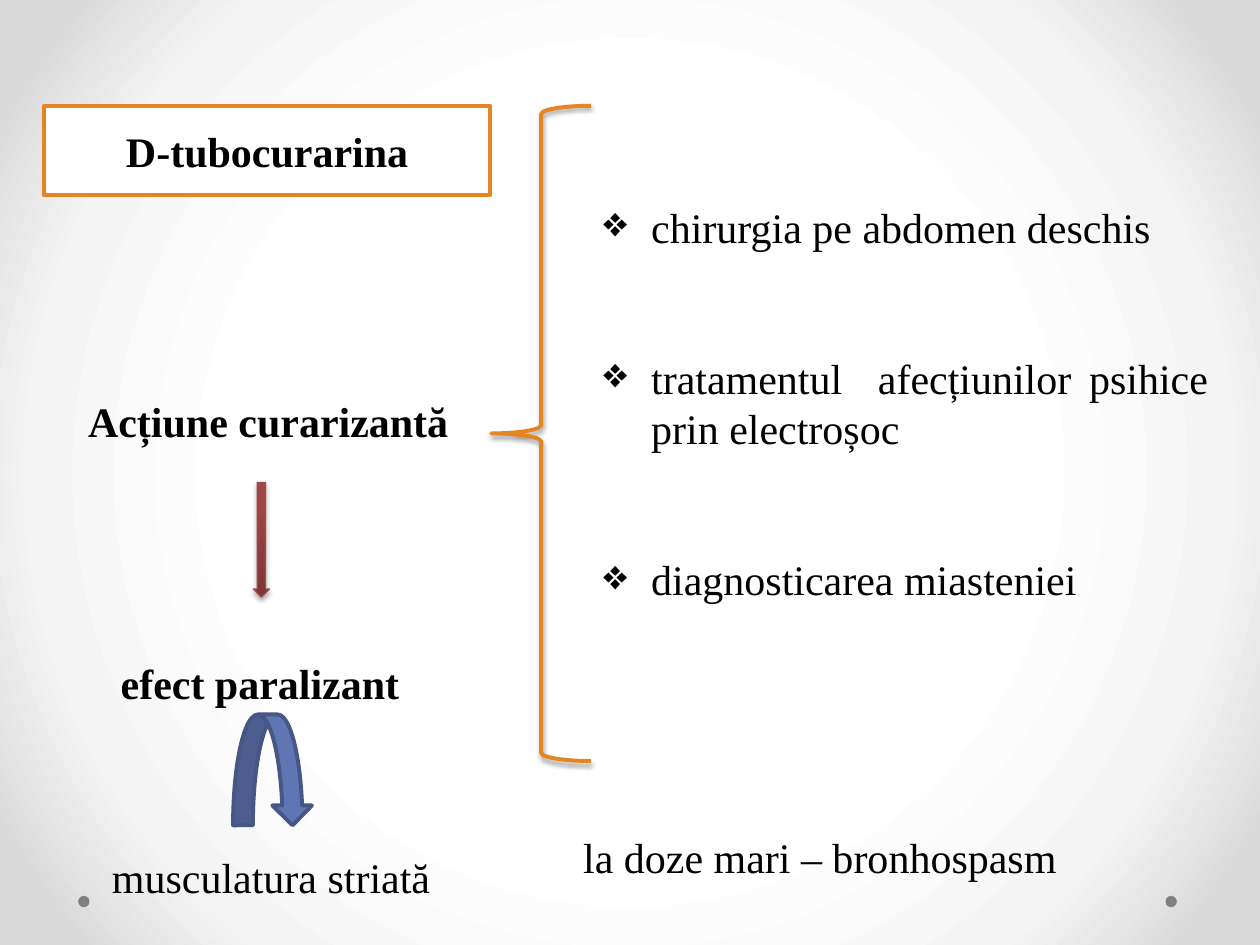
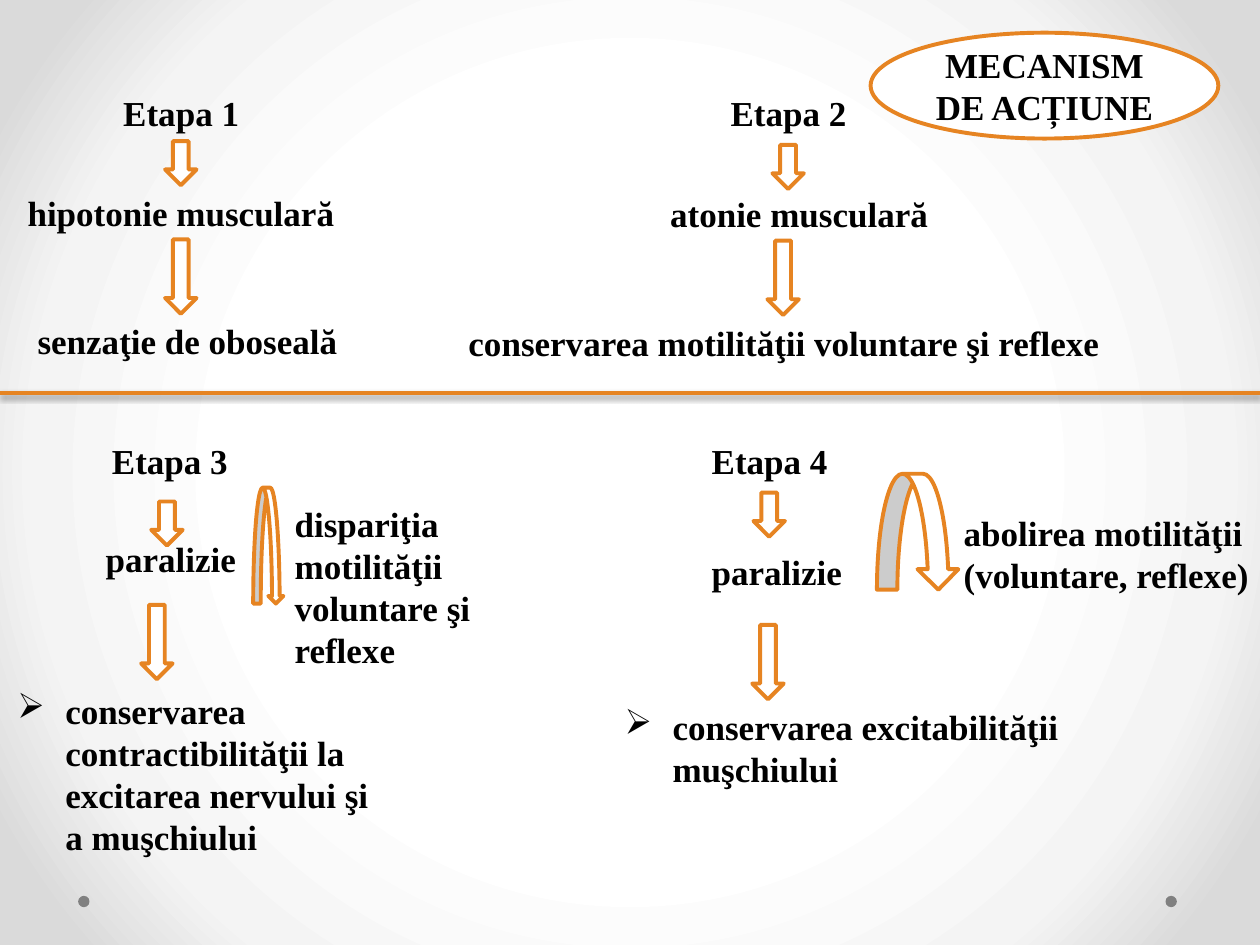
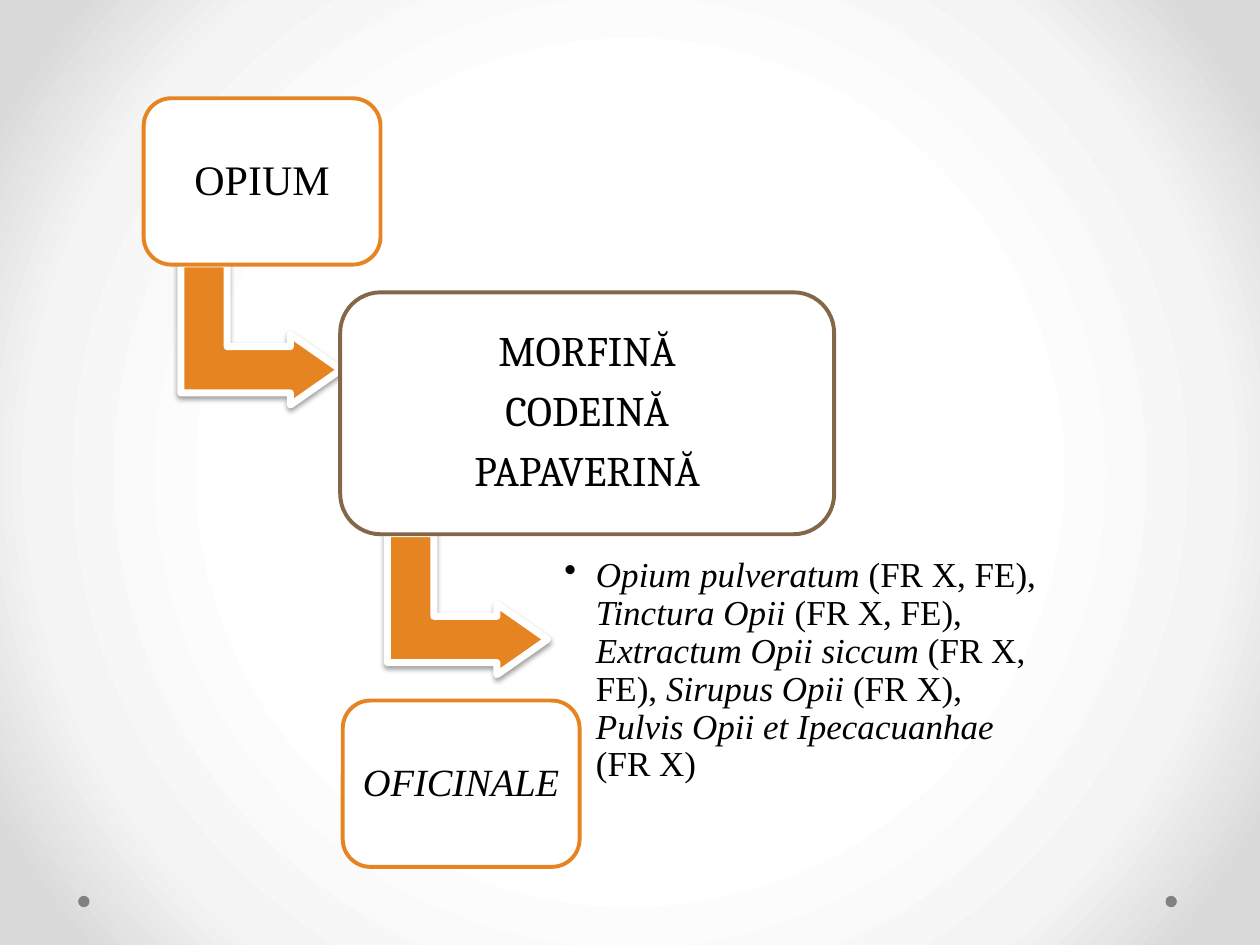
from pptx import Presentation
from pptx import util as u
from pptx.dml.color import RGBColor
from pptx.enum import shapes, text
from pptx.oxml import parse_xml
from pptx.oxml.ns import nsdecls, qn

BLACK, WHITE, GREY = "000000", "FFFFFF", "808080"
ORANGE, BROWN = "E68422", "846648"
BLUE, DARK_BLUE, RED = "6076B4", "475785", "9A4E4E"
SERIF = "Times New Roman"
KIND = shapes.MSO_SHAPE
ALIGN = text.PP_ALIGN
CENTER, JUSTIFY = ALIGN.CENTER, ALIGN.JUSTIFY
MIDDLE = text.MSO_ANCHOR.MIDDLE


def rgb(hex_value):
    return RGBColor.from_string(hex_value)


def inches(box):
    return [u.Inches(v) for v in box]


def gradient(stops, direction):
    marks = "".join(f'<a:gs pos="{pos * 1000}"><a:srgbClr val="{color}"/></a:gs>'
                    for pos, color in stops)
    return parse_xml(f'<a:gradFill {nsdecls("a")} rotWithShape="1">'
                     f'<a:gsLst>{marks}</a:gsLst>{direction}</a:gradFill>')


def set_background(master):
    master.background.fill.solid()
    bg = master.element.find(".//" + qn("p:bgPr"))
    circle = ('<a:path path="circle"><a:fillToRect l="50000" t="50000" '
              'r="50000" b="50000"/></a:path>')
    stops = [(50, WHITE), (76, "F4F4F4"), (92, "DADADA")]
    bg.replace(bg[0], gradient(stops, circle))


def set_effect(sp, alpha=0, dist=1.6):
    shadow = ""
    if alpha:
        shadow = (f'<a:outerShdw blurRad="{u.Pt(3.1)}" dist="{u.Pt(dist)}" dir="5400000" '
                  f'rotWithShape="0"><a:srgbClr val="{BLACK}">'
                  f'<a:alpha val="{alpha * 1000}"/></a:srgbClr></a:outerShdw>')
    sp.element.spPr.append(
        parse_xml(f'<a:effectLst {nsdecls("a")}>{shadow}</a:effectLst>'))


def add_bullet(p, char, indent):
    pPr = p._p.get_or_add_pPr()
    pPr.set("marL", str(u.Inches(indent)))
    pPr.set("indent", str(-u.Inches(indent)))
    pPr.append(parse_xml(f'<a:buChar {nsdecls("a")} char="{char}"/>'))


def write(tf, paras, size=20, bold=False, italic=False, font=SERIF, align=None,
          spacing=None, gap=0, bullet=None, indent=0.38, anchor=None, inset=None):
    if anchor is not None:
        tf.vertical_anchor = anchor
    if inset is not None:
        tf.margin_left = tf.margin_right = u.Inches(inset)
        tf.margin_top = tf.margin_bottom = u.Inches(inset)
    for i, para in enumerate([paras] if isinstance(paras, str) else paras):
        p = tf.add_paragraph() if i else tf.paragraphs[0]
        p.alignment = align
        if spacing:
            p.line_spacing = spacing
        if i and gap:
            p.space_before = u.Pt(gap)
        if bullet:
            add_bullet(p, bullet, indent)
        for words, slanted in [(para, italic)] if isinstance(para, str) else para:
            r = p.add_run()
            r.text = words
            r.font.name, r.font.size = font, u.Pt(size)
            r.font.bold, r.font.italic = bold, slanted
            r.font.color.rgb = rgb(BLACK)


def add_label(slide, words, *box, wrap=False, grow=True, **fmt):
    tf = slide.shapes.add_textbox(*inches(box)).text_frame
    tf.word_wrap = wrap
    if grow:
        tf.auto_size = text.MSO_AUTO_SIZE.SHAPE_TO_FIT_TEXT
    write(tf, words, **fmt)


def add_shape(slide, kind, *box, fill=WHITE, line=ORANGE, width=2.25,
              shadow=0, dist=1.6, adj=(), turn=0):
    sp = slide.shapes.add_shape(kind, *inches(box))
    for i, value in enumerate(adj):
        sp.adjustments[i] = value
    sp.rotation = turn
    if fill:
        sp.fill.solid()
        sp.fill.fore_color.rgb = rgb(fill)
    else:
        sp.fill.background()
    if line:
        sp.line.color.rgb = rgb(line)
        sp.line.width = u.Pt(width)
    else:
        sp.line.fill.background()
    set_effect(sp, shadow, dist)
    return sp


def add_down_arrow(slide, x, y, h):
    add_shape(slide, KIND.DOWN_ARROW, x, y, 0.25, h)


def add_divider(slide, y):
    line = slide.shapes.add_connector(shapes.MSO_CONNECTOR.STRAIGHT,
                                      *inches((0, y, 10, y)))
    line.line.color.rgb = rgb(ORANGE)
    line.line.width = u.Pt(2.25)
    set_effect(line, 38)


def add_node(slide, words, x, y, w, h, line=ORANGE, **fmt):
    add_shape(slide, KIND.ROUNDED_RECTANGLE, x, y, w, h, line=line, adj=[0.167])
    pad = 0.05 * h
    add_label(slide, words, x + pad, y + pad, w - 2 * pad, h - 2 * pad, wrap=True,
              grow=False, align=CENTER, anchor=MIDDLE, spacing=0.9, **fmt)


def add_bent_arrow(slide, x, y):
    add_shape(slide, KIND.BENT_UP_ARROW, x, y, 1.12, 1.27, fill=ORANGE, line=WHITE,
              width=4, shadow=38, adj=[0.328, 0.25, 0.358], turn=90)


def new_slide(prs):
    slide = prs.slides.add_slide(prs.slide_layouts[6])
    for x in (9.25, 0.62):
        add_shape(slide, KIND.OVAL, x, 7.11, 0.09, 0.09, fill=GREY, line=None)
    return slide


def build_action(prs):
    s = new_slide(prs)
    add_label(s, "Acțiune curarizantă", 0.6, 3.09, 3.09, 0.5, size=24, bold=True)
    add_label(s, "efect paralizant", 0.86, 5.17, 2.43, 0.5, size=24, bold=True)
    arrow = add_shape(s, KIND.DOWN_ARROW, 2.01, 3.83, 0.13, 0.91, line=RED,
                      width=0.75, shadow=35, dist=1.8)
    spPr = arrow.element.spPr
    stops = [(0, "7D3535"), (80, "A24545"), (100, "A44343")]
    spPr.replace(spPr.find(qn("a:solidFill")),
                 gradient(stops, '<a:lin ang="16200000" scaled="0"/>'))
    add_label(s, ["chirurgia pe abdomen deschis",
                  "tratamentul  afecțiunilor psihice prin electroșoc",
                  "diagnosticarea miasteniei"],
              4.69, 1.55, 5, 3.33, wrap=True, size=24, align=JUSTIFY,
              bullet="❖", gap=57.5)
    add_shape(s, KIND.LEFT_BRACE, 3.9, 0.84, 0.79, 5.2, fill=None, shadow=38)
    title = add_shape(s, KIND.RECTANGLE, 0.35, 0.84, 3.54, 0.71)
    write(title.text_frame, "D-tubocurarina", size=24, bold=True, align=CENTER,
          anchor=MIDDLE)
    add_label(s, "la doze mari – bronhospasm", 4.53, 6.55, 4.09, 0.5, wrap=True, size=24)
    add_shape(s, KIND.CURVED_DOWN_ARROW, 1.85, 5.67, 0.63, 0.88, fill=BLUE, line=DARK_BLUE)
    add_label(s, "musculatura striată", 0.79, 6.71, 2.75, 0.5, size=24, align=JUSTIFY)


def build_mechanism(prs):
    s = new_slide(prs)
    title = add_shape(s, KIND.OVAL, 6.91, 0.26, 2.76, 0.84)
    write(title.text_frame, "MECANISM DE ACȚIUNE", bold=True, align=CENTER, anchor=MIDDLE)
    add_divider(s, 3.12)
    steps = [
        ("Etapa 1", 0.88, 0.68, 1.13),
        ("hipotonie musculară", 0.12, 1.47, 2.72),
        ("senzaţie de oboseală", 0.2, 2.49, 2.6),
        ("Etapa 2", 5.7, 0.68, 1.13),
        ("atonie musculară", 5.22, 1.48, 2.26),
        ("conservarea motilităţii voluntare şi reflexe", 3.62, 2.5, 5.24),
        ("Etapa 3", 0.79, 3.44, 1.13),
        ("paralizie", 0.74, 4.22, 1.24),
        ("Etapa 4", 5.55, 3.44, 1.13),
        ("paralizie", 5.55, 4.32, 1.24),
    ]
    for words, x, y, w in steps:
        add_label(s, words, x, y, w, 0.44, bold=True)
    notes = [
        ("dispariţia motilităţii voluntare şi reflexe", 2.24, 3.94, 2.36, 1.45, None),
        ("abolirea motilităţii (voluntare, reflexe)", 7.55, 4.01, 2.61, 0.77, None),
        ("conservarea contractibilităţii la excitarea nervului şi a muşchiului",
         0.04, 5.42, 2.99, 1.45, "➢"),
        ("conservarea excitabilităţii muşchiului", 4.86, 5.55, 4.63, 0.77, "➢"),
    ]
    for words, *box, bullet in notes:
        add_label(s, words, *box, wrap=True, bold=True, bullet=bullet)
    for x, y in [(1.31, 1.12), (6.13, 1.15), (1.2, 3.98), (5.98, 3.91)]:
        add_down_arrow(s, x, y, 0.35)
    for x, y in [(1.31, 1.9), (6.09, 1.91), (1.12, 4.8), (5.97, 4.96)]:
        add_down_arrow(s, x, y, 0.59)
    for x, y, w in [(2.01, 3.87, 0.24), (6.96, 3.76, 0.65)]:
        add_shape(s, KIND.CURVED_DOWN_ARROW, x, y, w, 0.92)


def build_opium(prs):
    s = new_slide(prs)
    add_bent_arrow(s, 1.51, 2.02)
    add_node(s, "OPIUM", 1.14, 0.78, 1.88, 1.32, size=24, inset=0.1)
    add_bent_arrow(s, 3.15, 4.16)
    add_node(s, ["MORFINĂ", "CODEINĂ", "PAPAVERINĂ"], 2.7, 2.32, 3.92, 1.92,
             line=BROWN, size=24, font="Cambria", gap=8.4, inset=0.1)
    add_node(s, "OFICINALE", 2.72, 5.56, 1.88, 1.32, size=22, italic=True, inset=0.09)
    preparations = [
        ("Opium pulveratum", True), (" (FR X, FE), ", False),
        ("Tinctura Opii", True), (" (FR X, FE), ", False),
        ("Extractum Opii siccum", True), (" (FR X, FE), ", False),
        ("Sirupus Opii", True), (" (FR X), ", False),
        ("Pulvis Opii et Ipecacuanhae", True), (" (FR X)", False),
    ]
    add_label(s, [preparations], 4.4, 3.75, 4.06, 3.15, wrap=True, grow=False,
              anchor=MIDDLE, inset=0.08, spacing=0.9, bullet="•", indent=0.25)


def main():
    prs = Presentation()
    prs.slide_width, prs.slide_height = inches((10, 7.5))
    set_background(prs.slide_master)
    build_action(prs)
    build_mechanism(prs)
    build_opium(prs)
    prs.save("out.pptx")


if __name__ == "__main__":
    main()
